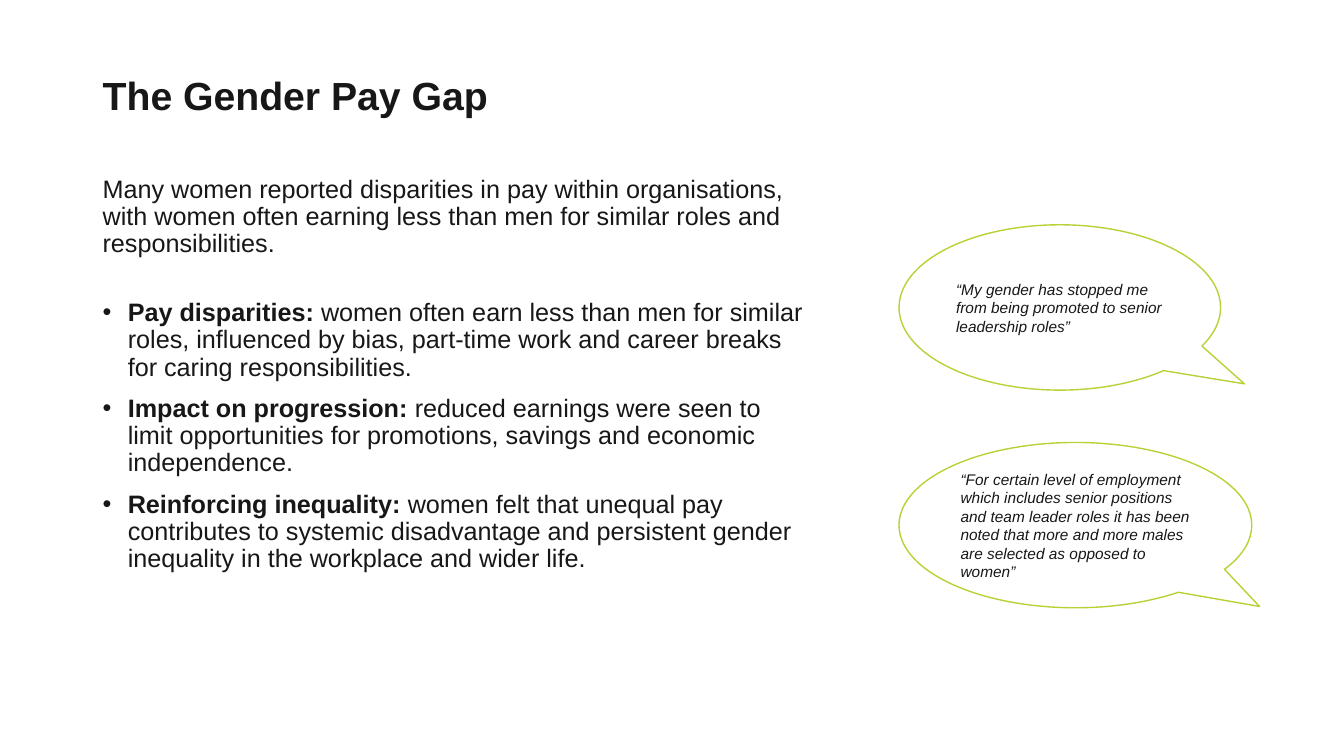
import pptx
import pptx.util
import pptx.dml.color
import pptx.enum.shapes
import pptx.enum.text
from lxml import etree

Pt = pptx.util.Pt
MIDDLE = pptx.enum.text.MSO_ANCHOR.MIDDLE
LEFT = pptx.enum.text.PP_ALIGN.LEFT
INK, LIME, WHITE = "181717", "BBD035", "FFFFFF"

TITLE = "The Gender Pay Gap"
INTRO = ("Many women reported disparities in pay within organisations, with women "
         "often earning less than men for similar roles and responsibilities.")
POINTS = [
    ("Pay disparities: ", "women often earn less than men for similar roles, influenced "
     "by bias, part-time work and career breaks for caring responsibilities."),
    ("Impact on progression: ", "reduced earnings were seen to limit opportunities for "
     "promotions, savings and economic independence."),
    ("Reinforcing inequality: ", "women felt that unequal pay contributes to systemic "
     "disadvantage and persistent gender inequality in the workplace and wider life."),
]
# text, top, width, tail position
QUOTES = [
    ("“For certain level of employment which includes senior positions and team leader "
     "roles it has been noted that more and more males are selected as opposed to women”",
     316.1, 252, (0.522, 0.492)),
    ("“My gender has stopped me from being promoted to senior leadership roles”",
     160.6, 229.7, (0.574, 0.462)),
]
MARGIN, QUOTE_LEFT, QUOTE_HIGH = 66.2, 642.2, 118.1


def color(code):
    return pptx.dml.color.RGBColor.from_string(code)


def style(para, size, **flags):
    para.alignment = LEFT
    font = para.font
    font.name, font.size = "Arial", Pt(size)
    font.color.rgb = color(INK)
    for name, value in flags.items():
        setattr(font, name, value)


def bullet(para):
    props = para._p.get_or_add_pPr()
    props.set("marL", str(Pt(18)))
    props.set("indent", str(-Pt(18)))
    for tag, key, value in (("buFont", "typeface", "Arial"), ("buChar", "char", "•")):
        etree.SubElement(props, pptx.oxml.ns.qn("a:" + tag)).set(key, value)


def add_title(slide):
    title = slide.shapes.title
    title.left, title.top, title.width, title.height = map(Pt, (MARGIN, 18, 769.7, 104.4))
    frame = title.text_frame
    frame.text = TITLE
    frame.vertical_anchor = MIDDLE
    frame.paragraphs[0].line_spacing = 0.9
    style(frame.paragraphs[0], 28, bold=True)


def add_body(slide):
    box = slide.shapes.add_textbox(*map(Pt, (MARGIN, 122.4, 517.7, 357.8)))
    frame = box.text_frame
    frame.word_wrap = True
    intro = frame.paragraphs[0]
    intro.text = INTRO
    intro.line_spacing = 0.9
    intro.space_after = Pt(20)
    style(intro, 18)
    for head, rest in POINTS:
        para = frame.add_paragraph()
        para.line_spacing = 0.9
        para.space_before = Pt(10)
        bullet(para)
        style(para, 18)
        run = para.add_run()
        run.text, run.font.bold = head, True
        para.add_run().text = rest


def add_quote(slide, text, top, width, tail):
    shape = slide.shapes.add_shape(
        pptx.enum.shapes.MSO_SHAPE.OVAL_CALLOUT,
        *map(Pt, (QUOTE_LEFT, top, width, QUOTE_HIGH)))
    shape.adjustments[0], shape.adjustments[1] = tail
    shape.shadow.inherit = False
    shape.fill.solid()
    shape.fill.fore_color.rgb = color(WHITE)
    shape.line.color.rgb = color(LIME)
    shape.line.width = Pt(1)
    frame = shape.text_frame
    frame.word_wrap = True
    frame.vertical_anchor = MIDDLE
    frame.text = text
    style(frame.paragraphs[0], 11, italic=True)


def main():
    deck = pptx.Presentation()
    deck.slide_width, deck.slide_height = Pt(960), Pt(540)
    slide = deck.slides.add_slide(deck.slide_layouts[5])
    add_title(slide)
    add_body(slide)
    for quote in QUOTES:
        add_quote(slide, *quote)
    deck.save("out.pptx")


if __name__ == "__main__":
    main()
